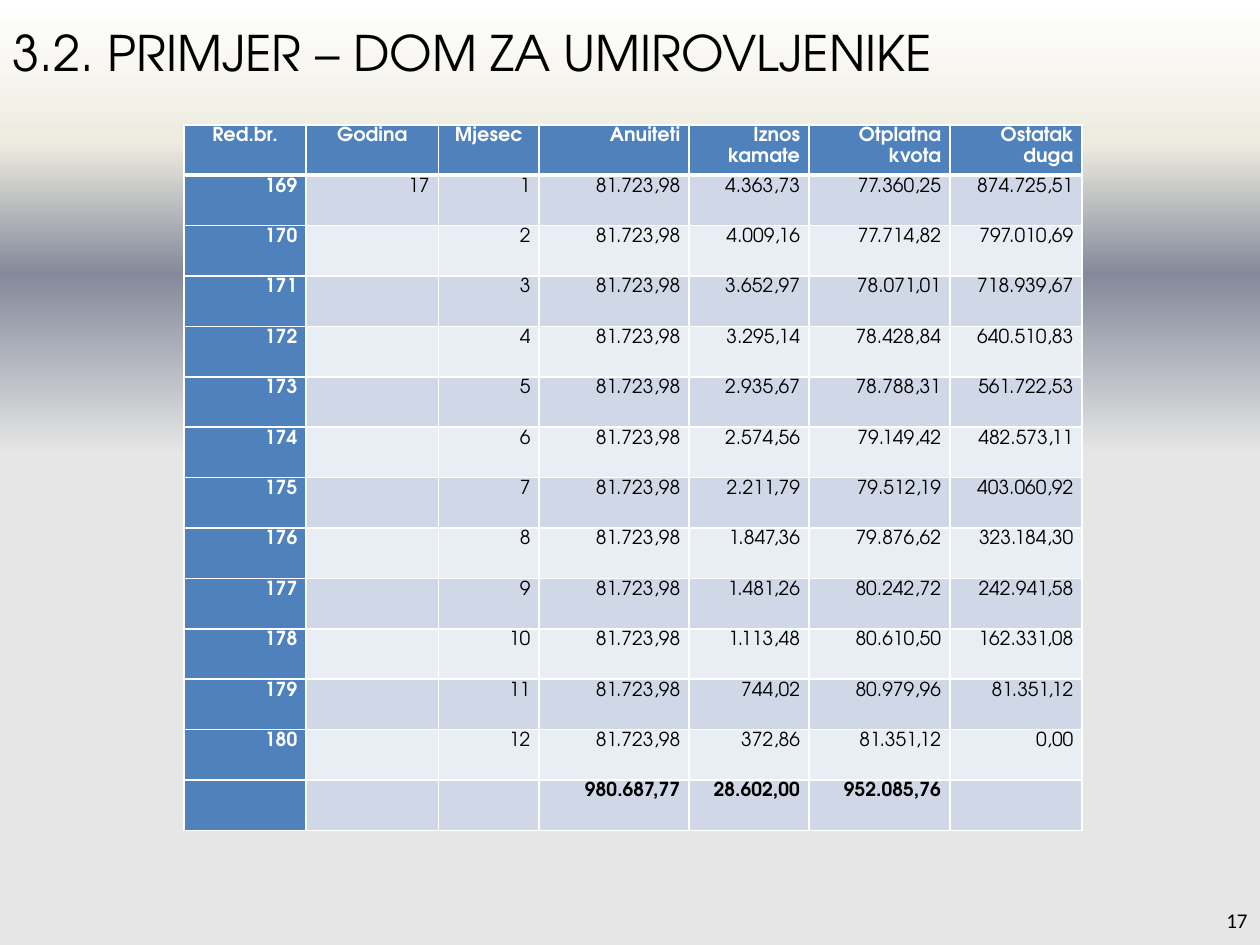
from lxml import etree
from pptx import Presentation
from pptx import util as u
from pptx.dml.color import RGBColor
from pptx.enum import text
from pptx.oxml import ns

BLACK = RGBColor(0x00, 0x00, 0x00)
WHITE = RGBColor(0xFF, 0xFF, 0xFF)
BLUE = RGBColor(0x4F, 0x81, 0xBD)
BANDS = RGBColor(0xD0, 0xD8, 0xE8), RGBColor(0xE9, 0xED, 0xF4)
CREAM = RGBColor(0xEE, 0xEC, 0xE1)
SLATE = RGBColor(0x84, 0x8A, 0x9B)
GREY = RGBColor(0xE6, 0xE6, 0xE6)
# Position in percent, colour, opacity in percent
BACKGROUND = [(0, WHITE, 100), (15, CREAM, 100), (29, SLATE, 77),
              (48, GREY, 100), (73, GREY, 100), (100, GREY, 100)]

FONT = "TeX Gyre Adventor"
LEFT, CENTER, RIGHT = (text.PP_ALIGN.LEFT, text.PP_ALIGN.CENTER,
                       text.PP_ALIGN.RIGHT)
COL_WIDTHS = [0.97, 1.05, 0.8, 1.19, 0.95, 1.12, 1.05]
ROW_HEIGHT = 0.4
HEADER = ["Red.br.", "Godina", "Mjesec", "Anuiteti", "Iznos kamate",
          "Otplatna kvota", "Ostatak duga"]
FIRST_NUMBER, YEAR, ANNUITY = 169, "17", "81.723,98"
MONTHS = [  # interest, repayment, remaining debt
    ("4.363,73", "77.360,25", "874.725,51"),
    ("4.009,16", "77.714,82", "797.010,69"),
    ("3.652,97", "78.071,01", "718.939,67"),
    ("3.295,14", "78.428,84", "640.510,83"),
    ("2.935,67", "78.788,31", "561.722,53"),
    ("2.574,56", "79.149,42", "482.573,11"),
    ("2.211,79", "79.512,19", "403.060,92"),
    ("1.847,36", "79.876,62", "323.184,30"),
    ("1.481,26", "80.242,72", "242.941,58"),
    ("1.113,48", "80.610,50", "162.331,08"),
    ("744,02", "80.979,96", "81.351,12"),
    ("372,86", "81.351,12", "0,00"),
]
TOTALS = ["", "", "", "980.687,77", "28.602,00", "952.085,76", ""]


def add_solid(parent, color, opacity=100):
    clr = etree.SubElement(parent, ns.qn("a:srgbClr"), val=str(color))
    if opacity < 100:
        etree.SubElement(clr, ns.qn("a:alpha"), val=str(opacity * 1000))


def write(tf, content, size, font=FONT, color=BLACK, bold=False, align=LEFT,
          line=None, after=None):
    p = tf.paragraphs[0]
    p.alignment = align
    p.line_spacing = line
    p.space_after = after
    r = p.add_run()
    r.text = content
    r.font.size = u.Pt(size)
    r.font.name = font
    r.font.bold = bold
    r.font.color.rgb = color


def set_borders(cell, color, bottom):
    """White rules of 1 pt, with their own width below the cell."""
    tc_pr = cell._tc.get_or_add_tcPr()
    widths = {"a:lnL": 1, "a:lnR": 1, "a:lnT": 1, "a:lnB": bottom}
    for i, (tag, width) in enumerate(widths.items()):
        ln = etree.Element(ns.qn(tag), w=str(u.Pt(width)))
        add_solid(etree.SubElement(ln, ns.qn("a:solidFill")), color)
        tc_pr.insert(i, ln)


class Deck:
    def __init__(self):
        self.prs = Presentation()
        self.prs.slide_width = u.Inches(10)
        self.prs.slide_height = u.Inches(7.5)
        self.s = self.prs.slides.add_slide(self.prs.slide_layouts[5])

    def background(self, stops):
        fill = self.s.background.fill
        fill.gradient()
        fill.gradient_angle = 270
        gs_lst = fill.gradient_stops[0]._gs.getparent()
        for gs in list(gs_lst):
            gs_lst.remove(gs)
        for pos, color, opacity in stops:
            gs = etree.SubElement(gs_lst, ns.qn("a:gs"), pos=str(pos * 1000))
            add_solid(gs, color, opacity)

    def title(self, content, left, top, width, height):
        sp = self.s.shapes.title
        sp.left, sp.top = u.Inches(left), u.Inches(top)
        sp.width, sp.height = u.Inches(width), u.Inches(height)
        sp.text_frame.auto_size = text.MSO_AUTO_SIZE.NONE
        sp.text_frame.vertical_anchor = text.MSO_ANCHOR.MIDDLE
        write(sp.text_frame, content, 28)

    def page_number(self, content, left, top, width, height):
        sp = self.s.shapes.add_textbox(u.Inches(left), u.Inches(top),
                                       u.Inches(width), u.Inches(height))
        sp.text_frame.word_wrap = True
        sp.text_frame.vertical_anchor = text.MSO_ANCHOR.MIDDLE
        write(sp.text_frame, content, 12, font="Calibri", align=RIGHT)

    def table(self, rows, left, top):
        frame = self.s.shapes.add_table(
            len(rows), len(COL_WIDTHS), u.Inches(left), u.Inches(top),
            u.Inches(sum(COL_WIDTHS)), u.Inches(ROW_HEIGHT * len(rows)))
        table = frame.table
        table.first_col = True
        for column, width in zip(table.columns, COL_WIDTHS):
            column.width = u.Inches(width)
        for i, row in enumerate(rows):
            table.rows[i].height = u.Inches(ROW_HEIGHT)
            for j, content in enumerate(row):
                self.cell(table.cell(i, j), content, i, j, i == len(rows) - 1)

    def cell(self, cell, content, i, j, is_total):
        is_head = i == 0 or j == 0
        cell.margin_left = cell.margin_right = u.Inches(0.07)
        cell.margin_top = cell.margin_bottom = 0
        cell.fill.solid()
        cell.fill.fore_color.rgb = BLUE if is_head else BANDS[(i - 1) % 2]
        set_borders(cell, WHITE, bottom=3 if i == 0 else 1)
        if content:
            write(cell.text_frame, content, 11,
                  color=WHITE if is_head else BLACK,
                  bold=is_head or is_total,
                  align=CENTER if i == 0 and j < 3 else RIGHT,
                  line=1.15, after=u.Pt(10))


def main():
    months = [[str(FIRST_NUMBER + i), "" if i else YEAR, str(i + 1), ANNUITY,
               *amounts] for i, amounts in enumerate(MONTHS)]
    deck = Deck()
    deck.background(BACKGROUND)
    deck.title("3.2. PRIMJER – DOM ZA UMIROVLJENIKE", 0, -0.21, 9.88, 1.25)
    deck.table([HEADER, *months, TOTALS], 1.46, 0.99)
    deck.page_number("17", 9.48, 7.1, 0.52, 0.4)
    deck.prs.save("out.pptx")


if __name__ == "__main__":
    main()
